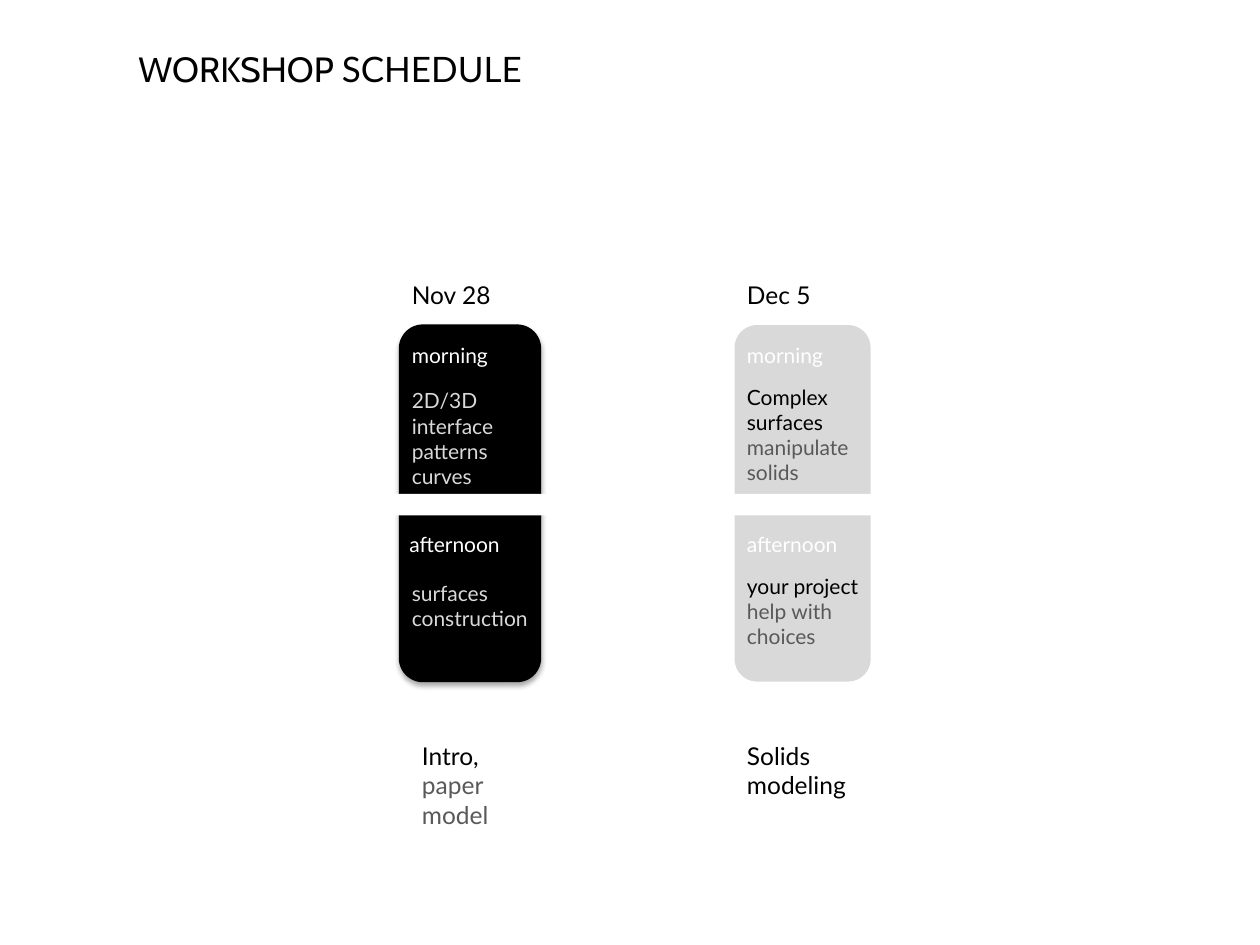
from lxml.etree import SubElement
from pptx import Presentation
from pptx.dml.color import RGBColor
from pptx.enum.shapes import MSO_SHAPE
from pptx.oxml.ns import qn
from pptx.util import Inches, Pt

BLACK, WHITE, LIGHT, GRAY = "000000", "FFFFFF", "D9D9D9", "595959"


def rgb(value):
    return RGBColor.from_string(value)


def add_block(s, kind, x, y, w, h, fill):
    sp = s.shapes.add_shape(kind, Inches(x), Inches(y), Inches(w), Inches(h))
    sp.shadow.inherit = False
    sp.fill.solid()
    sp.fill.fore_color.rgb = rgb(fill)
    sp.line.fill.background()
    return sp


def add_shadow(sp):
    effects = sp.element.spPr.find(qn("a:effectLst"))
    shadow = SubElement(effects, qn("a:outerShdw"), blurRad=str(Pt(3.1)),
                        dist=str(Pt(1.8)), dir="5400000", rotWithShape="0")
    color = SubElement(shadow, qn("a:srgbClr"), val=BLACK)
    SubElement(color, qn("a:alpha"), val="35000")


def format_run(r, size, color, font="Lato"):
    r.font.size = Pt(size)
    r.font.name = font
    r.font.color.rgb = rgb(color)


def add_text(s, x, y, w, h, size, lines):
    tb = s.shapes.add_textbox(Inches(x), Inches(y), Inches(w), Inches(h))
    tf = tb.text_frame
    tf.word_wrap = True
    tf.text = "\n".join(text for text, _ in lines)
    for p, (text, color) in zip(tf.paragraphs, lines):
        p.text = text
        for r in p.runs:
            format_run(r, size, color)


def add_title(s, x, y, w, h):
    tb = s.shapes.add_textbox(Inches(x), Inches(y), Inches(w), Inches(h))
    tf = tb.text_frame
    tf.word_wrap = True
    for text, font in (("WORKSHOP ", "Cabin"), ("SCHEDULE", "Lato")):
        r = tf.paragraphs[0].add_run()
        r.text = text
        format_run(r, 20, BLACK, font)


def add_cards(s, y, h):
    first = add_block(s, MSO_SHAPE.ROUNDED_RECTANGLE, 3.17, y, 1.12, h, BLACK)
    first.line.color.rgb = rgb(BLACK)
    first.line.width = Pt(0.75)
    add_shadow(first)
    add_block(s, MSO_SHAPE.ROUNDED_RECTANGLE, 5.83, y, 1.08, h, LIGHT)
    add_block(s, MSO_SHAPE.RECTANGLE, 0.83, 3.92, 8.08, 0.17, WHITE)


def add_day(s, x, w, date, afternoon_x, morning, afternoon, summary):
    add_text(s, x, 2.17, w, 0.81, 14, [(date, BLACK)])
    add_text(s, x, 2.67, w, 0.71, 12, [("morning", WHITE)])
    add_text(s, afternoon_x, 4.17, w, 0.71, 12, [("afternoon", WHITE)])
    for (y, h, lines) in (morning, afternoon):
        add_text(s, x, y, w, h, 12, lines)
    summary_x, summary_w, summary_h, lines = summary
    add_text(s, summary_x, 5.83, summary_w, summary_h, 14, lines)


def main():
    prs = Presentation()
    prs.slide_width, prs.slide_height = Inches(10), Inches(7.5)
    s = prs.slides.add_slide(prs.slide_layouts[6])
    add_title(s, 1, 0.33, 6.08, 0.44)
    add_cards(s, 2.58, 2.83)
    add_day(
        s, 3.17, 1.17, "Nov 28", 3.15,
        (3.03, 0.91, [(t, LIGHT) for t in ("2D/3D", "interface", "patterns", "curves")]),
        (4.56, 0.5, [("surfaces", LIGHT), ("construction", LIGHT)]),
        (3.25, 0.75, 0.81, [("Intro,", BLACK), ("paper model", GRAY)]),
    )
    add_day(
        s, 5.83, 1.17, "Dec 5", 5.83,
        (3, 0.91, [("Complex surfaces", BLACK), ("manipulate", GRAY), ("solids", GRAY)]),
        (4.5, 1.11, [("your project", BLACK), ("help with\vchoices", GRAY)]),
        (5.83, 1.17, 0.57, [("Solids", BLACK), ("modeling", BLACK)]),
    )
    prs.save("out.pptx")


if __name__ == "__main__":
    main()
